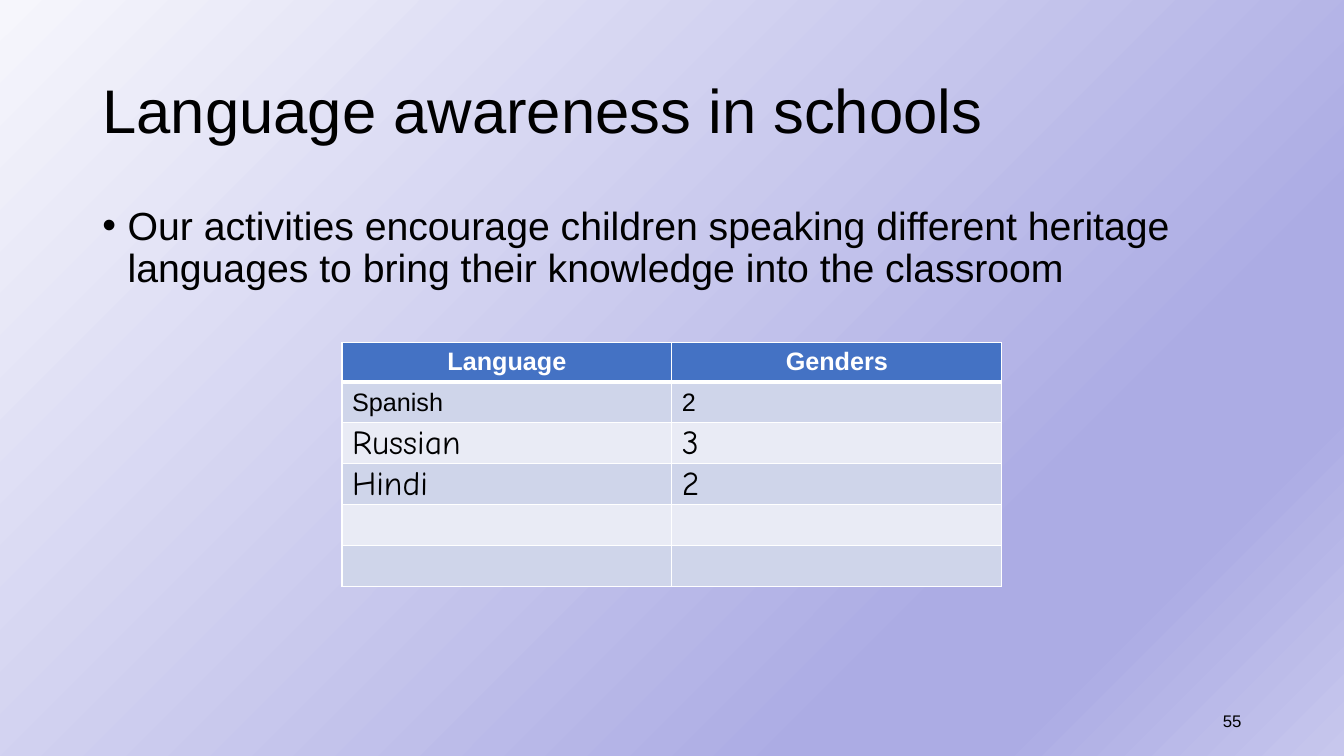
"""Build the slide on language awareness in schools."""
from lxml import etree
from pptx import Presentation
from pptx.dml.color import RGBColor
from pptx.enum import text
from pptx.oxml import ns
from pptx.util import Pt


def colour(value):
    return RGBColor.from_string(value)


def write(para, words, size, shade="000000", font="Arial", bold=False):
    span = para.add_run()
    span.text = words
    span.font.size = Pt(size)
    span.font.name = font
    span.font.bold = bold
    span.font.color.rgb = colour(shade)


deck = Presentation()
deck.slide_width, deck.slide_height = Pt(960), Pt(540)
page = deck.slides.add_slide(deck.slide_layouts[1])

backdrop = page.background.fill
backdrop.gradient()
backdrop.gradient_angle = 315
stops = page.element.find(".//" + ns.qn("a:gsLst"))
for stop in list(stops):
    stops.remove(stop)
for percent, shade in [(0, "F6F6FC"), (74, "ACACE4"), (83, "ACACE4"), (100, "C7C7ED")]:
    stop = etree.SubElement(stops, ns.qn("a:gs"), pos=str(percent * 1000))
    etree.SubElement(stop, ns.qn("a:srgbClr"), val=shade)

title, body = page.placeholders
number = page.shapes.add_textbox(Pt(678), Pt(500.5), Pt(216), Pt(28.75))
for box, top, height, anchor, align, size, words in [
    (title, 28.75, 104.4, "MIDDLE", "LEFT", 44, "Language awareness in schools"),
    (body, 143.75, 80.6, "TOP", "LEFT", 28,
     "Our activities encourage children speaking different heritage "
     "languages to bring their knowledge into the classroom"),
    (number, 500.5, 28.75, "MIDDLE", "RIGHT", 12, "55"),
]:
    if box is not number:
        box.left, box.top, box.width, box.height = Pt(66), Pt(top), Pt(828), Pt(height)
    frame = box.text_frame
    frame.word_wrap = True
    frame.auto_size = text.MSO_AUTO_SIZE.NONE
    frame.vertical_anchor = text.MSO_ANCHOR[anchor]
    para = frame.paragraphs[0]
    para.alignment = text.PP_ALIGN[align]
    if box is not number:
        para.line_spacing = 0.9
    write(para, words, size)

bullet = body.text_frame.paragraphs[0]
bullet.space_before = Pt(10)
layout = bullet._p.get_or_add_pPr()
layout.set("marL", str(Pt(18)))
layout.set("indent", str(Pt(-18)))
etree.SubElement(layout, ns.qn("a:buFont"), typeface="Arial")
etree.SubElement(layout, ns.qn("a:buChar"), char="•")

rows = [("Language", "Genders"), ("Spanish", "2"), ("Russian", "3"), ("Hindi", "2"), ("", ""), ("", "")]
table = page.shapes.add_table(len(rows), 2, Pt(244.25), Pt(244.8), Pt(471.4), Pt(174.5)).table
for r, entries in enumerate(rows):
    table.rows[r].height = Pt(29.3 if r else 28)
    for c, words in enumerate(entries):
        cell = table.cell(r, c)
        para = cell.text_frame.paragraphs[0]
        if r == 0:
            para.alignment = text.PP_ALIGN.CENTER
            write(para, words, 18, "FFFFFF", bold=True)
        elif words:
            cell.vertical_anchor = text.MSO_ANCHOR.MIDDLE
            cell.margin_top = cell.margin_bottom = 0
            write(para, words, *((18,) if r == 1 else (24, "000000", "Comic Neue")))
        edges = cell._tc.get_or_add_tcPr()
        for side in "LRTB":
            thick = (r, side) in [(0, "B"), (1, "T")]
            line = etree.SubElement(edges, ns.qn("a:ln" + side), w=str(Pt(3 if thick else 1)))
            paint = etree.SubElement(line, ns.qn("a:solidFill"))
            etree.SubElement(paint, ns.qn("a:srgbClr"), val="FFFFFF")
        cell.fill.solid()
        cell.fill.fore_color.rgb = colour(("CFD5EA" if r % 2 else "E9EBF5") if r else "4472C4")

deck.save("out.pptx")
